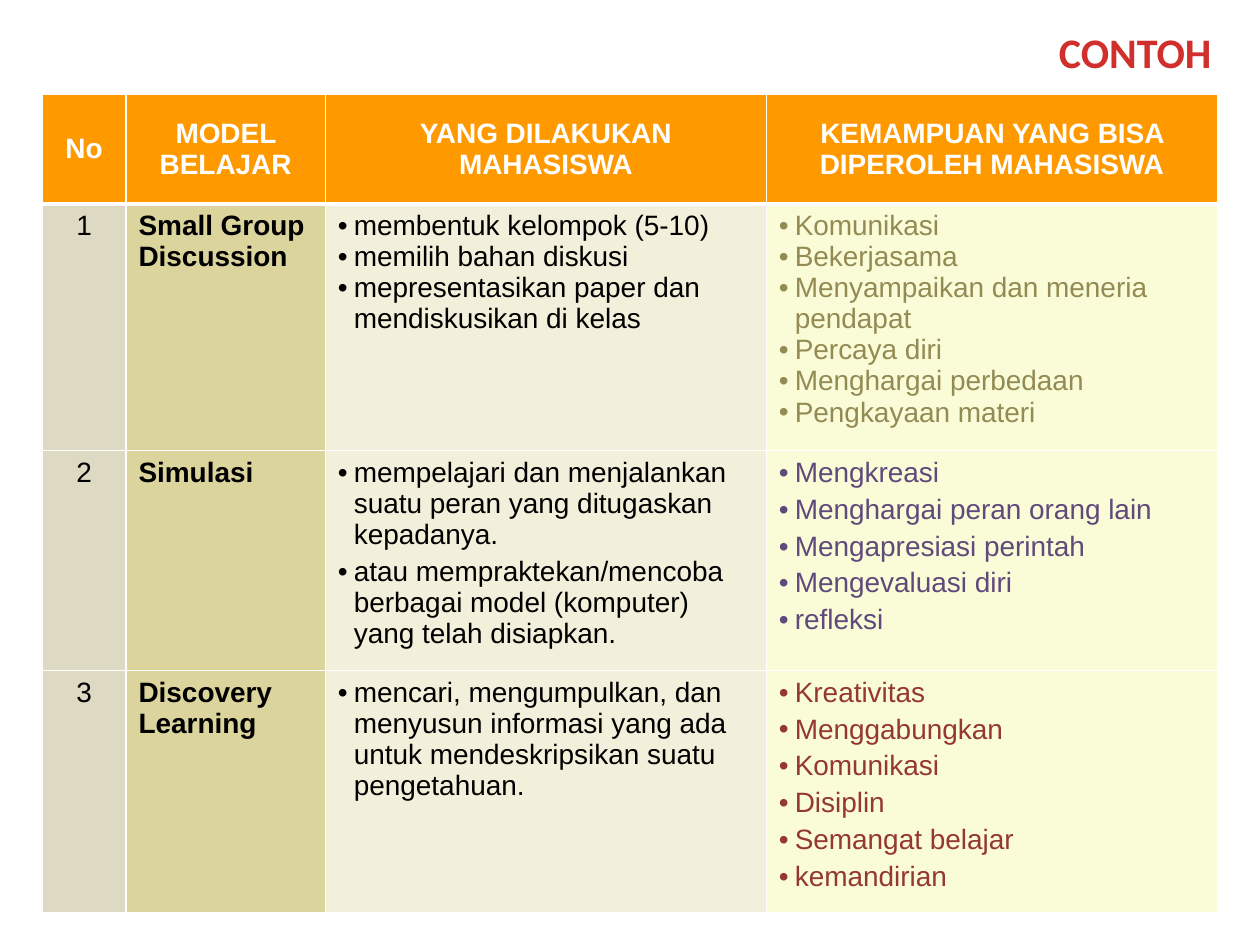
"""Build a slide with a table of learning models and the skills they develop."""

from dataclasses import dataclass, field

from lxml.etree import SubElement
from pptx import Presentation
from pptx.dml.color import RGBColor as Rgb
from pptx.enum.text import MSO_ANCHOR as Anchor, MSO_AUTO_SIZE as AutoSize, PP_ALIGN as Align
from pptx.oxml.ns import qn
from pptx.util import Cm, Pt


@dataclass(frozen=True)
class Theme:
    title_font: str = "Calibri"
    body_font: str = "Arial"
    title_size: float = 24
    body_size: float = 16
    title: str = "D02F2C"
    white: str = "FFFFFF"
    text: str = "000000"
    header: str = "FF9900"
    columns: tuple[str, ...] = ("DDD9C3", "DBD49D", "F2EFDA", "F9FCD6")
    thin: float = 0.75
    thick: float = 3


@dataclass(frozen=True)
class Model:
    name: str
    activities: tuple[str, ...]
    skills: tuple[str, ...]
    skill_color: str
    height: float
    gap: float = 3.3


@dataclass(frozen=True)
class CellStyle:
    fill: str
    color: str = "000000"
    bold: bool = False
    bullet: bool = False
    gap: float = 0
    align: Align = Align.LEFT
    anchor: Anchor = Anchor.TOP
    borders: dict[str, float] = field(default_factory=dict)


THEME = Theme()
COLUMN_WIDTHS = (1.69, 4.02, 8.89, 9.1)
HEADER_HEIGHT = 2.2
HEADINGS = (
    "No",
    "MODEL BELAJAR",
    "YANG DILAKUKAN MAHASISWA",
    "KEMAMPUAN YANG BISA DIPEROLEH MAHASISWA",
)
MODELS = (
    Model(
        "Small Group Discussion",
        (
            "membentuk kelompok (5-10)",
            "memilih bahan diskusi",
            "mepresentasikan paper dan mendiskusikan di kelas",
        ),
        (
            "Komunikasi",
            "Bekerjasama",
            "Menyampaikan dan meneria pendapat",
            "Percaya diri",
            "Menghargai perbedaan",
            "Pengkayaan materi",
        ),
        "948A54", 4.98, 0,
    ),
    Model(
        "Simulasi",
        (
            "mempelajari dan menjalankan suatu peran yang ditugaskan kepadanya.",
            "atau mempraktekan/mencoba berbagai model (komputer) yang telah disiapkan.",
        ),
        (
            "Mengkreasi",
            "Menghargai peran orang lain",
            "Mengapresiasi perintah",
            "Mengevaluasi diri",
            "refleksi",
        ),
        "604A7B", 4.43,
    ),
    Model(
        "Discovery Learning",
        ("mencari, mengumpulkan, dan menyusun informasi yang ada untuk "
         "mendeskripsikan suatu pengetahuan.",),
        (
            "Kreativitas",
            "Menggabungkan",
            "Komunikasi",
            "Disiplin",
            "Semangat belajar",
            "kemandirian",
        ),
        "953735", 4.88,
    ),
)


def add_run(paragraph, text: str, color: str, **formats) -> None:
    """Add a run and apply its font formats."""
    run = paragraph.add_run()
    run.text = text
    for name, value in formats.items():
        setattr(run.font, name, value)
    run.font.color.rgb = Rgb.from_string(color)


def add_bullet(paragraph) -> None:
    """Give a paragraph a hanging bullet."""
    properties = paragraph._p.get_or_add_pPr()
    properties.set("marL", str(Cm(0.32)))
    properties.set("indent", str(-Cm(0.32)))
    SubElement(properties, qn("a:buFont"), typeface=THEME.body_font)
    SubElement(properties, qn("a:buChar"), char="•")


def set_borders(cell, widths: dict[str, float]) -> None:
    """Draw white borders on all four sides of a cell."""
    properties = cell._tc.get_or_add_tcPr()
    for index, side in enumerate("LRTB"):
        width = Pt(widths.get(side, THEME.thin))
        line = SubElement(properties, qn(f"a:ln{side}"), w=str(width))
        fill = SubElement(line, qn("a:solidFill"))
        SubElement(fill, qn("a:srgbClr"), val=THEME.white)
        properties.insert(index, line)


def fill_cell(cell, texts: tuple[str, ...], style: CellStyle) -> None:
    """Write paragraphs into a cell and style it."""
    cell.fill.solid()
    cell.fill.fore_color.rgb = Rgb.from_string(style.fill)
    cell.vertical_anchor = style.anchor
    set_borders(cell, style.borders)
    frame = cell.text_frame
    for index, text in enumerate(texts):
        paragraph = frame.add_paragraph() if index else frame.paragraphs[0]
        paragraph.alignment = style.align
        paragraph.space_before = Pt(style.gap if index else 0)
        if style.bullet:
            add_bullet(paragraph)
        add_run(paragraph, text, style.color, name=THEME.body_font,
                size=Pt(THEME.body_size), bold=style.bold)


def add_title(slide) -> None:
    """Add the slide title at the top right."""
    box = slide.shapes.add_textbox(Cm(21.08), Cm(0.41), Cm(3.61), Cm(1.27))
    formats = {"word_wrap": False, "auto_size": AutoSize.SHAPE_TO_FIT_TEXT}
    for name, value in formats.items():
        setattr(box.text_frame, name, value)
    paragraph = box.text_frame.paragraphs[0]
    paragraph.alignment = Align.CENTER
    add_run(paragraph, "CONTOH", THEME.title, name=THEME.title_font,
            size=Pt(THEME.title_size), bold=True)


def add_model_table(slide) -> None:
    """Add the table of learning models."""
    heights = (HEADER_HEIGHT, *(model.height for model in MODELS))
    table = slide.shapes.add_table(
        len(heights), len(COLUMN_WIDTHS), Cm(0.85), Cm(1.91),
        Cm(sum(COLUMN_WIDTHS)), Cm(sum(heights)),
    ).table
    for column, width in zip(table.columns, COLUMN_WIDTHS):
        column.width = Cm(width)
    for row, height in zip(table.rows, heights):
        row.height = Cm(height)

    heading_style = CellStyle(THEME.header, THEME.white, bold=True, align=Align.CENTER,
                              anchor=Anchor.MIDDLE, borders={"B": THEME.thick})
    for column, heading in enumerate(HEADINGS):
        fill_cell(table.cell(0, column), (heading,), heading_style)

    number_fill, name_fill, activity_fill, skill_fill = THEME.columns
    for row, model in enumerate(MODELS, start=1):
        borders = {"T": THEME.thick} if row == 1 else {}
        listing = {"bullet": True, "gap": model.gap, "borders": borders}
        contents = (
            ((str(row),), CellStyle(number_fill, THEME.text, align=Align.CENTER, borders=borders)),
            ((model.name,), CellStyle(name_fill, THEME.text, bold=True, borders=borders)),
            (model.activities, CellStyle(activity_fill, THEME.text, **listing)),
            (model.skills, CellStyle(skill_fill, model.skill_color, **listing)),
        )
        for column, (texts, style) in enumerate(contents):
            fill_cell(table.cell(row, column), texts, style)


def main() -> None:
    """Create and save the presentation."""
    presentation = Presentation()
    presentation.slide_width, presentation.slide_height = Cm(25.4), Cm(19.05)
    slide = presentation.slides.add_slide(presentation.slide_layouts[6])
    add_model_table(slide)
    add_title(slide)
    presentation.save("out.pptx")


if __name__ == "__main__":
    main()
